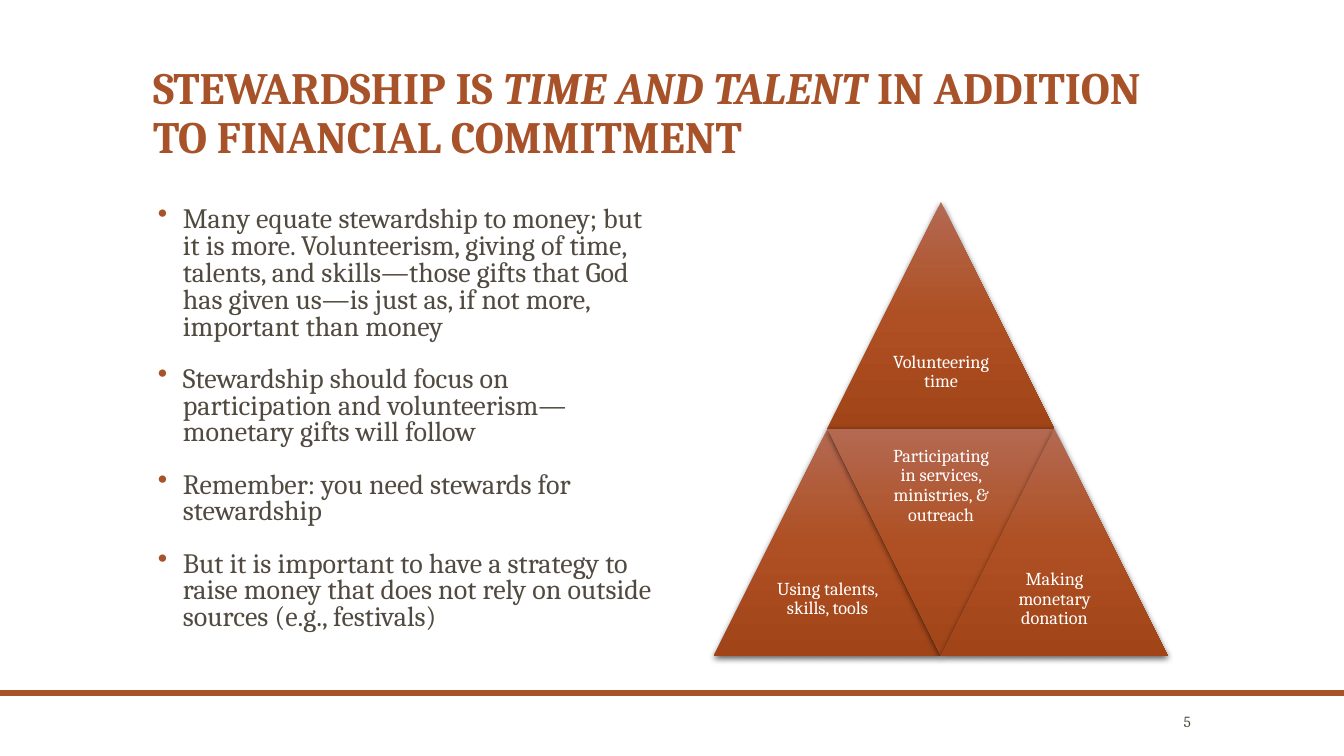
from lxml import etree
from pptx import Presentation
from pptx.dml.color import RGBColor
from pptx.enum.shapes import MSO_SHAPE
from pptx.enum.text import MSO_ANCHOR, MSO_AUTO_SIZE, PP_ALIGN
from pptx.oxml import parse_xml
from pptx.oxml.ns import nsdecls, qn
from pptx.util import Emu, Pt

RECTANGLE = MSO_SHAPE.RECTANGLE
TRIANGLE = MSO_SHAPE.ISOSCELES_TRIANGLE
TOP, MIDDLE, BOTTOM = MSO_ANCHOR.TOP, MSO_ANCHOR.MIDDLE, MSO_ANCHOR.BOTTOM
LEFT, CENTER, RIGHT = PP_ALIGN.LEFT, PP_ALIGN.CENTER, PP_ALIGN.RIGHT
NO_AUTOFIT = MSO_AUTO_SIZE.NONE

RUST = RGBColor(0xA8, 0x52, 0x29)
BROWN = RGBColor(0x51, 0x4A, 0x40)
WHITE = RGBColor(0xFF, 0xFF, 0xFF)
GRADIENT = (
    (0, RGBColor(0xB4, 0x69, 0x52)),
    (50, RGBColor(0xAE, 0x50, 0x23)),
    (100, RGBColor(0xA1, 0x45, 0x19)),
)
SHADOW = RGBColor(0, 0, 0)
FONT = "Cambria"
PX_PER_INCH = 100.8
SLIDE_WIDTH, SLIDE_HEIGHT = 1344, 756

TITLE_SPANS = (
    ("STEWARDSHIP IS ", False),
    ("TIME AND TALENT ", True),
    ("IN ADDITION TO FINANCIAL COMMITMENT", False),
)
POINTS = (
    "Many equate stewardship to money; but it is more. Volunteerism, giving of time, "
    "talents, and skills—those gifts that God has given us—is just as, if not more, "
    "important than money",
    "Stewardship should focus on participation and volunteerism—monetary gifts will follow",
    "Remember: you need stewards for stewardship",
    "But it is important to have a strategy to raise money that does not rely on outside "
    "sources (e.g., festivals)",
)
PYRAMID = (
    ("Volunteering time", 1, 0, False),
    ("Using talents, skills, tools", 0, 2, False),
    ("Participating in services, ministries, & outreach", 1, 2, True),
    ("Making monetary donation", 2, 2, False),
)


def px(length):
    """Turn pixels into EMU."""
    return Emu(round(length * 914400 / PX_PER_INCH))


def place(box):
    """Turn a pixel box into EMU left, top, width and height."""
    return [px(length) for length in box]


def style(para, size, color, align=LEFT, bold=False):
    """Format a whole paragraph."""
    para.alignment = align
    para.font.name = FONT
    para.font.size = Pt(size)
    para.font.bold = bold
    para.font.color.rgb = color


def add_text_box(page, box, anchor, inset=None):
    """Add an empty wrapping text box and return its text frame."""
    frame = page.shapes.add_textbox(*place(box)).text_frame
    frame.word_wrap = True
    frame.vertical_anchor = anchor
    if inset is not None:
        frame.margin_left = frame.margin_right = px(inset)
        frame.margin_top = frame.margin_bottom = px(inset)
    return frame


def add_title(page, box):
    """Fill the title placeholder."""
    title = page.shapes.title
    title.left, title.top, title.width, title.height = place(box)
    frame = title.text_frame
    frame.word_wrap = True
    frame.auto_size = NO_AUTOFIT
    frame.vertical_anchor = BOTTOM
    para = frame.paragraphs[0]
    para.line_spacing = 0.9
    style(para, 32, RUST, bold=True)
    for text, italic in TITLE_SPANS:
        span = para.add_run()
        span.text = text
        span.font.italic = italic


def add_bullet(para):
    """Give a paragraph a hanging rust bullet."""
    properties = para._p.get_or_add_pPr()
    properties.set("marL", str(px(30)))
    properties.set("indent", str(px(-25)))
    color = etree.SubElement(properties, qn("a:buClr"))
    etree.SubElement(color, qn("a:srgbClr"), val=str(RUST))
    etree.SubElement(properties, qn("a:buChar"), char="•")


def add_points(page, box):
    """Add the bulleted list."""
    frame = add_text_box(page, box, TOP)
    for index, text in enumerate(POINTS):
        para = frame.add_paragraph() if index else frame.paragraphs[0]
        para.text = text
        add_bullet(para)
        para.line_spacing = 0.8
        para.space_before = Pt(18 if index else 0)
        style(para, 20, BROWN)


def add_triangle(page, box, inverted):
    """Add one shaded triangle with a soft shadow."""
    triangle = page.shapes.add_shape(TRIANGLE, *place(box))
    triangle.rotation = 180 if inverted else 0
    triangle.line.fill.background()
    triangle.shadow.inherit = False
    stops = "".join(
        f'<a:gs pos="{position * 1000}"><a:srgbClr val="{color}"/></a:gs>'
        for position, color in GRADIENT
    )
    properties = triangle._element.spPr
    properties.find(qn("a:ln")).addprevious(parse_xml(
        f'<a:gradFill {nsdecls("a")} rotWithShape="0"><a:gsLst>{stops}</a:gsLst>'
        '<a:lin ang="5400000" scaled="0"/></a:gradFill>'
    ))
    properties.find(qn("a:effectLst")).append(parse_xml(
        f'<a:outerShdw {nsdecls("a")} blurRad="{Pt(4.5)}" dist="{Pt(1.5)}" '
        f'dir="5400000" algn="ctr" rotWithShape="0"><a:srgbClr val="{SHADOW}">'
        '<a:alpha val="63000"/></a:srgbClr></a:outerShdw>'
    ))


def add_pyramid(page, box):
    """Add four triangles on a grid of quarter steps, each with its label."""
    left, top, width, height = box
    step_x, step_y = width / 4, height / 4
    for text, column, row, inverted in PYRAMID:
        x, y = left + column * step_x, top + row * step_y
        add_triangle(page, (x, y, 2 * step_x, 2 * step_y), inverted)
        label_top = y if inverted else y + step_y
        label_box = (x + step_x / 2, label_top, step_x, step_y)
        para = add_text_box(page, label_box, MIDDLE, inset=5).paragraphs[0]
        para.text = text
        para.line_spacing = 0.9
        style(para, 13, WHITE, CENTER)


def add_footer(page, box):
    """Add the rule across the page and the page number below it."""
    left, top, width, height = box
    rule = page.shapes.add_shape(RECTANGLE, *place((left, top, width, 6)))
    rule.shadow.inherit = False
    rule.fill.solid()
    rule.fill.fore_color.rgb = RUST
    rule.line.fill.background()
    number_box = (left + width - 220, top + height - 48, 77, 26)
    para = add_text_box(page, number_box, MIDDLE).paragraphs[0]
    para.text = "5"
    style(para, 11, BROWN, RIGHT)


def main():
    """Build the deck and save it."""
    deck = Presentation()
    deck.slide_width, deck.slide_height = px(SLIDE_WIDTH), px(SLIDE_HEIGHT)
    page = deck.slides.add_slide(deck.slide_layouts[5])
    add_footer(page, (0, 690, SLIDE_WIDTH, 66))
    add_title(page, (143, 42, 1058, 126))
    add_points(page, (143, 202, 521, 454))
    add_pyramid(page, (714, 202, 454, 454))
    deck.save("out.pptx")


if __name__ == "__main__":
    main()
